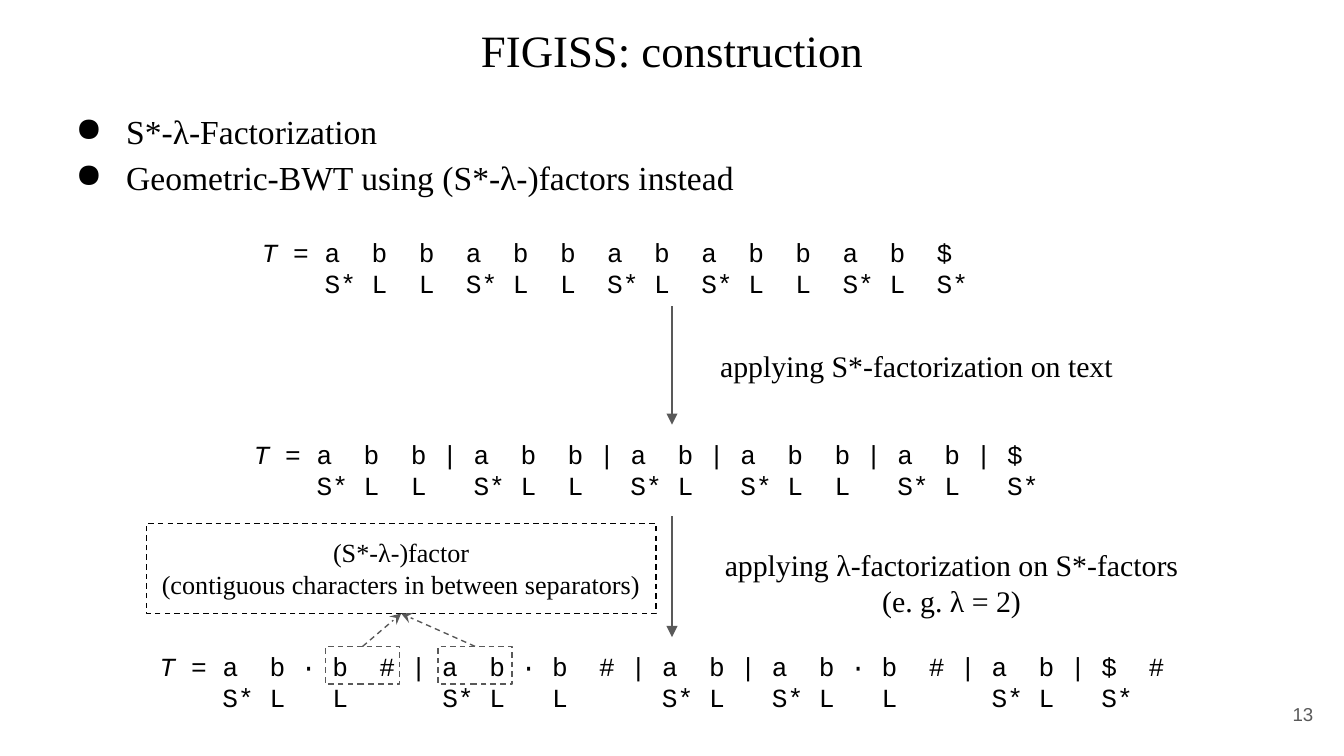
"""Build the slide on constructing FIGISS by S*-λ-factorization."""
from dataclasses import dataclass

from lxml import etree
from pptx import Presentation
from pptx.dml.color import RGBColor
from pptx.enum.dml import MSO_LINE
from pptx.enum.shapes import MSO_CONNECTOR, MSO_SHAPE
from pptx.enum.text import MSO_ANCHOR, PP_ALIGN
from pptx.oxml.ns import qn
from pptx.util import Pt

LEFT, CENTER, RIGHT = PP_ALIGN.LEFT, PP_ALIGN.CENTER, PP_ALIGN.RIGHT
TOP, MIDDLE = MSO_ANCHOR.TOP, MSO_ANCHOR.MIDDLE
STRAIGHT, RECTANGLE = MSO_CONNECTOR.STRAIGHT, MSO_SHAPE.RECTANGLE
DASH = MSO_LINE.DASH


@dataclass(frozen=True)
class Theme:
    ink: RGBColor = RGBColor(0x00, 0x00, 0x00)
    gray: RGBColor = RGBColor(0x59, 0x59, 0x59)
    serif: str = "Times New Roman"
    mono: str = "Courier New"
    sans: str = "Arial"
    title: float = 24
    body: float = 18
    label: float = 16
    small: float = 14
    number: float = 10
    inset: float = 7.2
    line: float = 0.75


@dataclass(frozen=True)
class Box:
    x: float
    y: float
    w: float
    h: float

    @property
    def mid_x(self) -> float:
        return self.x + self.w / 2


@dataclass(frozen=True)
class Style:
    size: float
    font: str
    color: RGBColor
    align: PP_ALIGN = CENTER
    anchor: MSO_ANCHOR = TOP


@dataclass(frozen=True)
class Label:
    box: Box
    text: str
    style: Style


@dataclass(frozen=True)
class Sequence:
    box: Box
    characters: str
    types: str


@dataclass(frozen=True)
class Arrow:
    start: tuple[float, float]
    end: tuple[float, float]
    head: str = "triangle"
    dashed: bool = False


THEME = Theme()
TITLE = Style(THEME.title, THEME.serif, THEME.ink)
BODY = Style(THEME.body, THEME.serif, THEME.ink, LEFT)
STEP = Style(THEME.label, THEME.serif, THEME.ink)
NOTE = Style(THEME.small, THEME.serif, THEME.ink)
CODE = Style(THEME.small, THEME.mono, THEME.ink, LEFT)
NUMBER = Style(THEME.number, THEME.sans, THEME.gray, RIGHT, MIDDLE)

LABELS = [
    Label(Box(24.5, 5, 671, 45.4), "FIGISS: construction", TITLE),
    Label(Box(366.5, 179.3, 249.1, 33.8), "applying S*-factorization on text", STEP),
    Label(Box(365.8, 285.8, 288, 53.3),
          "applying λ-factorization on S*-factors\n(e. g. λ = 2)", STEP),
    Label(Box(667.4, 367.2, 43.2, 31), "13", NUMBER),
]
BULLETS = Label(Box(24.5, 49, 671, 68.4),
                "S*-λ-Factorization\nGeometric-BWT using (S*-λ-)factors instead", BODY)
SEQUENCES = [
    Sequence(Box(133.2, 119.5, 491.8, 48.2),
             " = a  b  b  a  b  b  a  b  a  b  b  a  b  $",
             "    S* L  L  S* L  L  S* L  S* L  L  S* L  S*"),
    Sequence(Box(128.9, 227.5, 462.2, 48.2),
             " = a  b  b | a  b  b | a  b | a  b  b | a  b | $",
             "    S* L  L   S* L  L   S* L   S* L  L   S* L   S*"),
    Sequence(Box(78.5, 341.3, 563, 48.2),
             " = a  b · b  # | a  b · b  # | a  b | a  b · b  # | a  b | $  #",
             "    S* L   L      S* L   L      S* L   S* L   L      S* L   S*"),
]
CALLOUT = Label(Box(78.5, 280.3, 272.9, 48.4),
                "(S*-λ-)factor\n(contiguous characters in between separators)", NOTE)
FACTORS = [Box(x, 346.3, 39.6, 20.2) for x in (234.7, 174.5)]
STEPS = [Arrow((360, top), (360, bottom)) for top, bottom in ((164.2, 227.5), (276.5, 341.3))]


def write(s, text: str, style: Style) -> None:
    tf = s.text_frame
    tf.word_wrap = True
    tf.vertical_anchor = style.anchor
    tf.margin_left = tf.margin_right = tf.margin_top = tf.margin_bottom = Pt(THEME.inset)
    tf.text = text
    for p in tf.paragraphs:
        p.alignment = style.align
        for r in p.runs:
            format_run(r, style)


def format_run(r, style: Style) -> None:
    r.font.size = Pt(style.size)
    r.font.name = style.font
    r.font.color.rgb = style.color


def add_label(slide, label: Label):
    b = label.box
    s = slide.shapes.add_textbox(Pt(b.x), Pt(b.y), Pt(b.w), Pt(b.h))
    write(s, label.text, label.style)
    return s


def add_bullets(slide, label: Label) -> None:
    for p in add_label(slide, label).text_frame.paragraphs:
        p.line_spacing = 1.15
        pr = p._p.get_or_add_pPr()
        pr.set("marL", str(Pt(36)))
        pr.set("indent", str(-Pt(27)))
        etree.SubElement(pr, qn("a:buChar"), char="●")


def add_sequence(slide, seq: Sequence) -> None:
    s = add_label(slide, Label(seq.box, f"T\n{seq.types}", CODE))
    p = s.text_frame.paragraphs[0]
    p.runs[0].font.italic = True
    r = p.add_run()
    r.text = seq.characters
    format_run(r, CODE)


def add_frame(slide, b: Box, color: RGBColor):
    s = slide.shapes.add_shape(RECTANGLE, Pt(b.x), Pt(b.y), Pt(b.w), Pt(b.h))
    s.shadow.inherit = False
    s.fill.background()
    s.line.color.rgb = color
    s.line.width = Pt(THEME.line)
    s.line.dash_style = DASH
    return s


def add_arrow(slide, arrow: Arrow) -> None:
    s = slide.shapes.add_connector(STRAIGHT, *map(Pt, arrow.start + arrow.end))
    s.line.color.rgb = THEME.gray
    s.line.width = Pt(THEME.line)
    if arrow.dashed:
        s.line.dash_style = DASH
    etree.SubElement(s.line._get_or_add_ln(), qn("a:tailEnd"), type=arrow.head)
    etree.SubElement(s._element.spPr, qn("a:effectLst"))


def main() -> None:
    prs = Presentation()
    prs.slide_width, prs.slide_height = Pt(720), Pt(405)
    slide = prs.slides.add_slide(prs.slide_layouts[6])
    add_bullets(slide, BULLETS)
    for label in LABELS:
        add_label(slide, label)
    for seq in SEQUENCES:
        add_sequence(slide, seq)
    for step in STEPS:
        add_arrow(slide, step)
    write(add_frame(slide, CALLOUT.box, THEME.ink), CALLOUT.text, CALLOUT.style)
    target = (CALLOUT.box.mid_x, CALLOUT.box.y + CALLOUT.box.h)
    for factor in FACTORS:
        add_frame(slide, factor, THEME.gray)
        add_arrow(slide, Arrow((factor.mid_x, factor.y), target, "stealth", True))
    prs.save("out.pptx")


if __name__ == "__main__":
    main()
